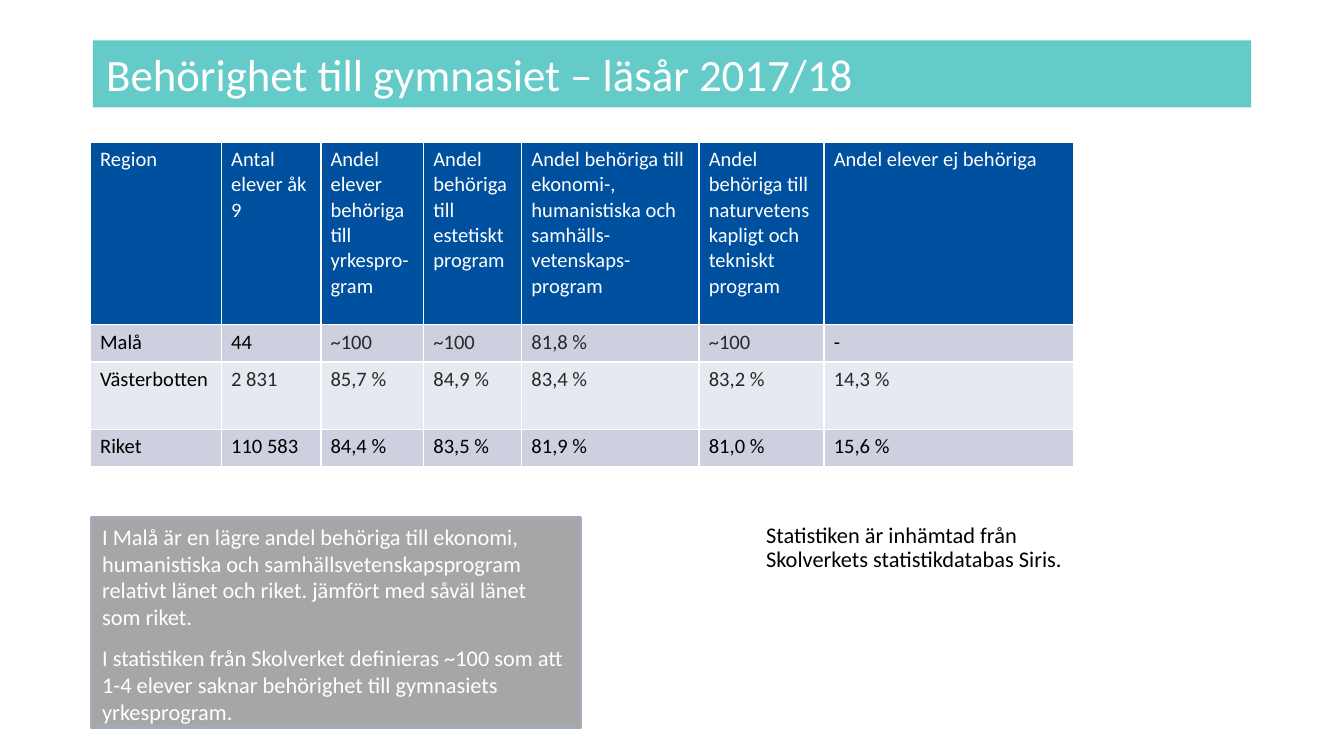
from lxml.etree import SubElement
from pptx import Presentation
from pptx.dml.color import RGBColor
from pptx.enum.text import MSO_ANCHOR, MSO_AUTO_SIZE, PP_ALIGN
from pptx.oxml import parse_xml
from pptx.oxml.ns import nsdecls, qn
from pptx.util import Inches, Pt

COLORS = {
    "teal": "64CBC9", "blue": "0050A0", "band": "CCD0DF", "light": "E7E9F0",
    "grey": "A6A6A6", "edge": "A3ABB6", "white": "FFFFFF", "black": "000000",
    "dark": "292929",
}
COLUMNS = 100
SLIDE_WIDTH = Inches(10)
SLIDE_HEIGHT = SLIDE_WIDTH * 9 // 16
UNIT = SLIDE_WIDTH / COLUMNS

HEADER = [
    "Region", "Antal elever åk 9", "Andel elever behöriga till yrkespro-gram",
    "Andel behöriga till estetiskt program",
    "Andel behöriga till ekonomi-, humanistiska och samhälls-vetenskaps-program",
    "Andel behöriga till naturvetenskapligt och tekniskt program",
    "Andel elever ej behöriga",
]
ROWS = [
    ["Malå", "44", "~100", "~100", "81,8 %", "~100", "-"],
    ["Västerbotten", "2 831", "85,7 %", "84,9 %", "83,4 %", "83,2 %", "14,3 %"],
    ["Riket", "110 583", "84,4 %", "83,5 %", "81,9 %", "81,0 %", "15,6 %"],
]
DARK_COLUMNS = [range(2, 6), range(1, 7), range(0)]
COLUMN_WIDTHS = [9.75, 7.4, 7.65, 7.3, 13.2, 9.3, 18.6]
ROW_HEIGHTS = [13.6, 2.8, 5, 2.8]


def grid(n):
    return int(n * UNIT)


def rgb(name):
    return RGBColor.from_string(COLORS[name])


def fill(target, color):
    target.fill.solid()
    target.fill.fore_color.rgb = rgb(color)


def format_runs(p, size, color):
    for r in p.runs:
        r.font.name = "Calibri"
        r.font.size = Pt(size)
        r.font.color.rgb = rgb(color)


def place_text(sp, box, paragraphs, size, color, margins, anchor=MSO_ANCHOR.TOP,
               space=0, spacing=1.0):
    sp.left, sp.top, sp.width, sp.height = map(grid, box)
    tf = sp.text_frame
    tf.word_wrap = True
    tf.auto_size = MSO_AUTO_SIZE.NONE
    tf.vertical_anchor = anchor
    tf.margin_left = tf.margin_right = grid(margins[0])
    tf.margin_top = tf.margin_bottom = grid(margins[1])
    for i, text in enumerate(paragraphs):
        p = tf.paragraphs[0] if i == 0 else tf.add_paragraph()
        p.text = text
        pPr = p._p.get_or_add_pPr()
        pPr.set("marL", "0")
        pPr.set("indent", "0")
        SubElement(pPr, qn("a:buNone"))
        p.alignment = PP_ALIGN.LEFT
        p.line_spacing = spacing
        p.space_before = Pt(space if i else 0)
        p.space_after = Pt(0)
        format_runs(p, size, color)


def add_title(s, box):
    sp = s.shapes.title
    place_text(sp, box, ["Behörighet till gymnasiet – läsår 2017/18"],
               24, "white", (1, 0.5), MSO_ANCHOR.MIDDLE)
    fill(sp, "teal")


def add_comment(sp, box):
    place_text(sp, box, [
        "I Malå är en lägre andel behöriga till ekonomi, humanistiska och "
        "samhällsvetenskapsprogram relativt länet och riket. jämfört med såväl "
        "länet som riket.",
        "I statistiken från Skolverket definieras ~100 som att 1-4 elever saknar "
        "behörighet till gymnasiets yrkesprogram.",
    ], 12, "white", (0.8, 0.4), space=7.5)
    fill(sp, "grey")
    sp.line.color.rgb = rgb("edge")
    sp.line.width = Pt(2)


def add_source(sp, box):
    place_text(sp, box,
               ["Statistiken är inhämtad från Skolverkets statistikdatabas Siris."],
               12, "black", (1, 0.5), spacing=0.9)


def set_borders(cell):
    tcPr = cell._tc.get_or_add_tcPr()
    for i, tag in enumerate(["lnL", "lnR", "lnT", "lnB"]):
        tcPr.insert(i, parse_xml(
            f'<a:{tag} {nsdecls("a")} w="{Pt(1)}"><a:solidFill>'
            f'<a:srgbClr val="{COLORS["white"]}"/></a:solidFill></a:{tag}>'))


def format_cell(cell, text, background, color):
    cell.text = text
    cell.margin_left = cell.margin_right = grid(0.73)
    cell.margin_top = cell.margin_bottom = grid(0.36)
    format_runs(cell.text_frame.paragraphs[0], 11, color)
    fill(cell, background)
    set_borders(cell)


def add_statistics(s, left, top):
    box = left, top, sum(COLUMN_WIDTHS), sum(ROW_HEIGHTS)
    table = s.shapes.add_table(len(ROW_HEIGHTS), len(COLUMN_WIDTHS),
                               *map(grid, box)).table
    for column, width in zip(table.columns, COLUMN_WIDTHS):
        column.width = grid(width)
    for row, height in zip(table.rows, ROW_HEIGHTS):
        row.height = grid(height)
    for c, text in enumerate(HEADER):
        format_cell(table.cell(0, c), text, "blue", "white")
    for r, (values, dark) in enumerate(zip(ROWS, DARK_COLUMNS), 1):
        for c, text in enumerate(values):
            format_cell(table.cell(r, c), text, "band" if r % 2 else "light",
                        "dark" if c in dark else "black")


def main():
    prs = Presentation()
    prs.slide_width, prs.slide_height = SLIDE_WIDTH, SLIDE_HEIGHT
    s = prs.slides.add_slide(prs.slide_layouts[3])
    add_title(s, (6.9, 3, 86.2, 5))
    add_source(s.placeholders[2], (56, 38.5, 24.2, 7.4))
    add_statistics(s, 6.72, 10.55)
    add_comment(s.placeholders[1], (6.8, 38.5, 36.4, 15.6))
    prs.save("out.pptx")


if __name__ == "__main__":
    main()
